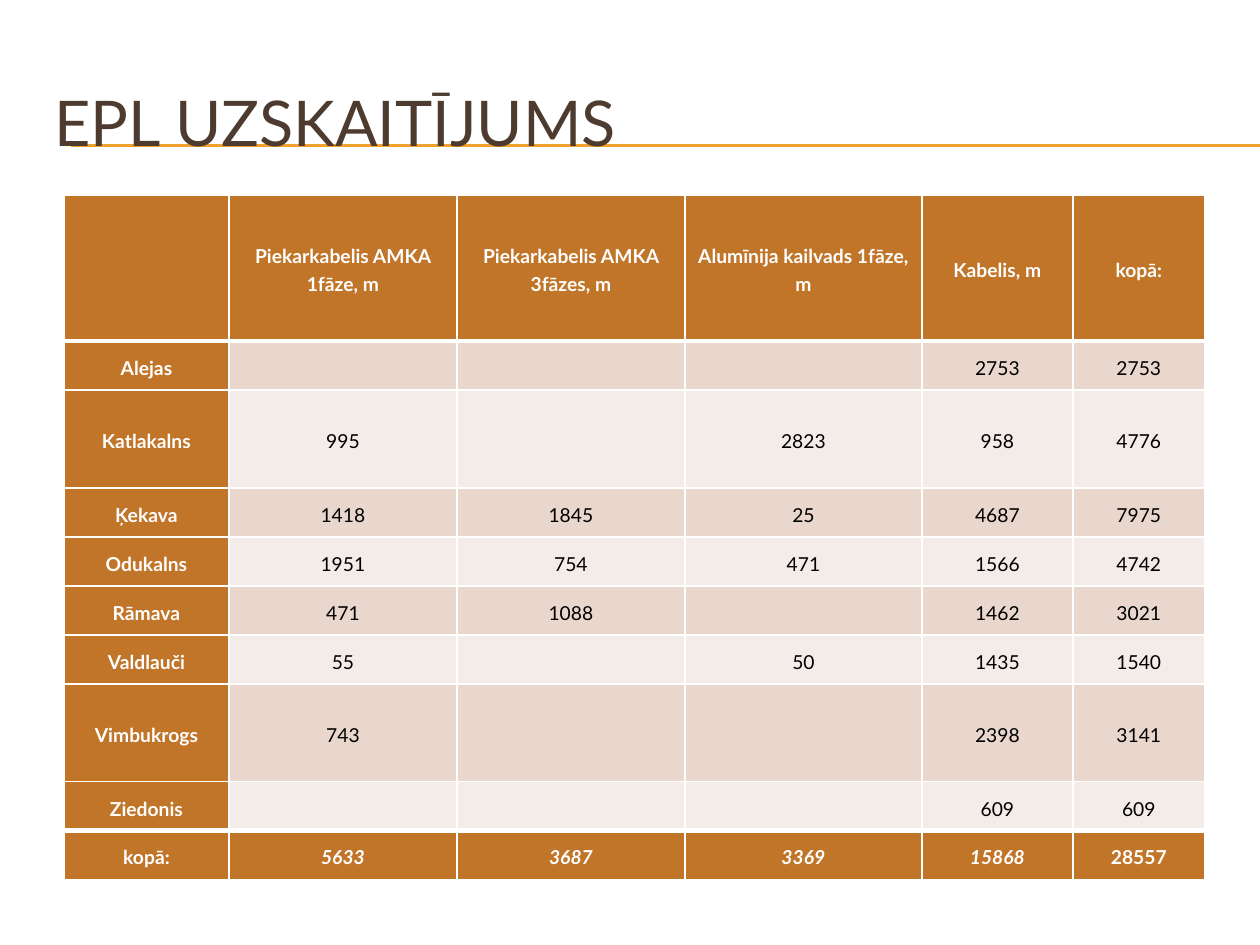
from lxml.etree import SubElement
from pptx import Presentation
from pptx.dml.color import RGBColor
from pptx.enum.shapes import MSO_CONNECTOR
from pptx.enum.text import MSO_ANCHOR, PP_ALIGN
from pptx.oxml.ns import qn
from pptx.util import Pt

PX = 914400 / 126
FONT = "Lato"
WHITE = RGBColor(0xFF, 0xFF, 0xFF)
BLACK = RGBColor(0, 0, 0)
BROWN = RGBColor(0x4E, 0x3B, 0x30)
GOLD = RGBColor(0xF0, 0xA2, 0x2E)
ORANGE = RGBColor(0xC1, 0x75, 0x29)
BANDS = [RGBColor(0xF4, 0xEC, 0xE8), RGBColor(0xE9, 0xD6, 0xCD)]

ROWS = [
    ["", "Piekarkabelis AMKA 1fāze, m", "Piekarkabelis AMKA 3fāzes, m",
     "Alumīnija kailvads 1fāze, m", "Kabelis, m", "kopā:"],
    ["Alejas", "", "", "", "2753", "2753"],
    ["Katlakalns", "995", "", "2823", "958", "4776"],
    ["Ķekava", "1418", "1845", "25", "4687", "7975"],
    ["Odukalns", "1951", "754", "471", "1566", "4742"],
    ["Rāmava", "471", "1088", "", "1462", "3021"],
    ["Valdlauči", "55", "", "50", "1435", "1540"],
    ["Vimbukrogs", "743", "", "", "2398", "3141"],
    ["Ziedonis", "", "", "", "609", "609"],
    ["kopā:", "5633", "3687", "3369", "15868", "28557"],
]
COLUMN_WIDTHS = [165, 228, 228, 237, 151, 132]
ROW_HEIGHTS = [146, 49, 98, 49, 49, 49, 49, 98, 49, 49]
LAST = len(ROWS) - 1


def px(length):
    return round(length * PX)


def add_border(cell, side, points):
    properties = cell._tc.get_or_add_tcPr()
    line = SubElement(properties, qn(f"a:{side}"), w=str(Pt(points)))
    fill = SubElement(line, qn("a:solidFill"))
    SubElement(fill, qn("a:srgbClr"), val=str(WHITE))


deck = Presentation()
deck.slide_width = px(1260)
deck.slide_height = px(945)
page = deck.slides.add_slide(deck.slide_layouts[6])

for y in (145, 146):
    rule = page.shapes.add_connector(
        MSO_CONNECTOR.STRAIGHT, px(71), px(y), px(1260), px(y))
    rule.line.color.rgb = GOLD
    rule.line.width = Pt(0.75)
    SubElement(rule._element.spPr, qn("a:effectLst"))

title = page.shapes.add_textbox(px(42), px(63), px(1197), px(116))
title.text_frame.word_wrap = True
title.text_frame.vertical_anchor = MSO_ANCHOR.MIDDLE
title.text_frame.text = "EPL UZSKAITĪJUMS"
span = title.text_frame.paragraphs[0].runs[0]
span.font.name = FONT
span.font.size = Pt(36)
span.font.color.rgb = BROWN

table = page.shapes.add_table(
    len(ROWS), len(COLUMN_WIDTHS), px(64), px(195),
    px(sum(COLUMN_WIDTHS)), px(sum(ROW_HEIGHTS))).table
table.first_col = True
table.last_row = True
for column, width in zip(table.columns, COLUMN_WIDTHS):
    column.width = px(width)

for r, (texts, height) in enumerate(zip(ROWS, ROW_HEIGHTS)):
    table.rows[r].height = px(height)
    for c, text in enumerate(texts):
        cell = table.cell(r, c)
        strong = r in (0, LAST) or c == 0
        cell.vertical_anchor = MSO_ANCHOR.MIDDLE
        cell.margin_left = cell.margin_right = px(9)
        cell.margin_top = cell.margin_bottom = 0
        add_border(cell, "lnL", 1)
        add_border(cell, "lnR", 1)
        add_border(cell, "lnT", 3 if r in (1, LAST) else 1)
        add_border(cell, "lnB", 3 if r in (0, LAST - 1) else 1)
        cell.fill.solid()
        cell.fill.fore_color.rgb = ORANGE if strong else BANDS[r % 2]
        para = cell.text_frame.paragraphs[0]
        para.text = text
        para.alignment = PP_ALIGN.CENTER
        para.line_spacing = 1.2
        for span in para.runs:
            span.font.name = FONT
            span.font.size = Pt(11)
            span.font.bold = strong
            span.font.italic = r == LAST and 0 < c < len(texts) - 1
            span.font.color.rgb = WHITE if strong else BLACK

deck.save("out.pptx")
